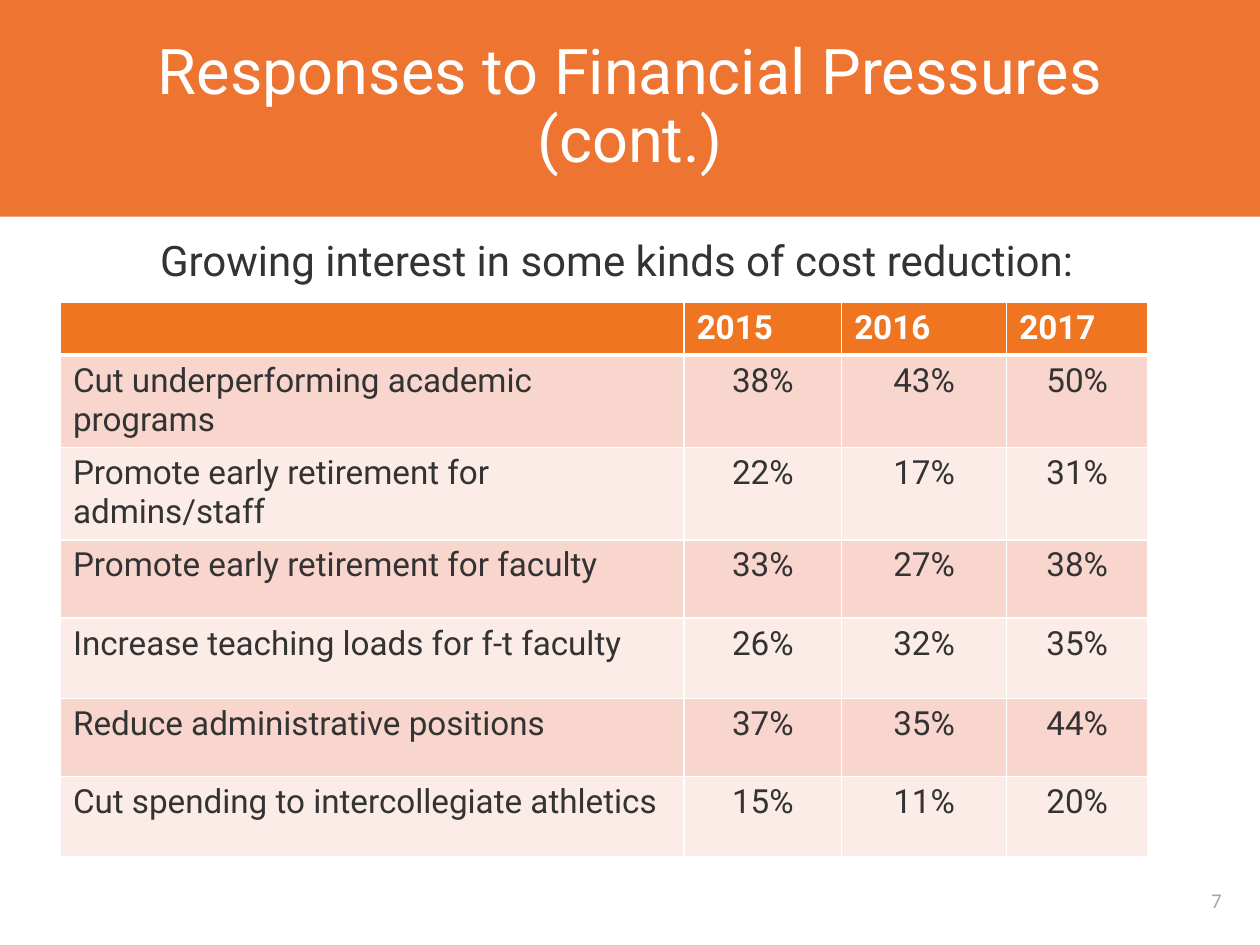
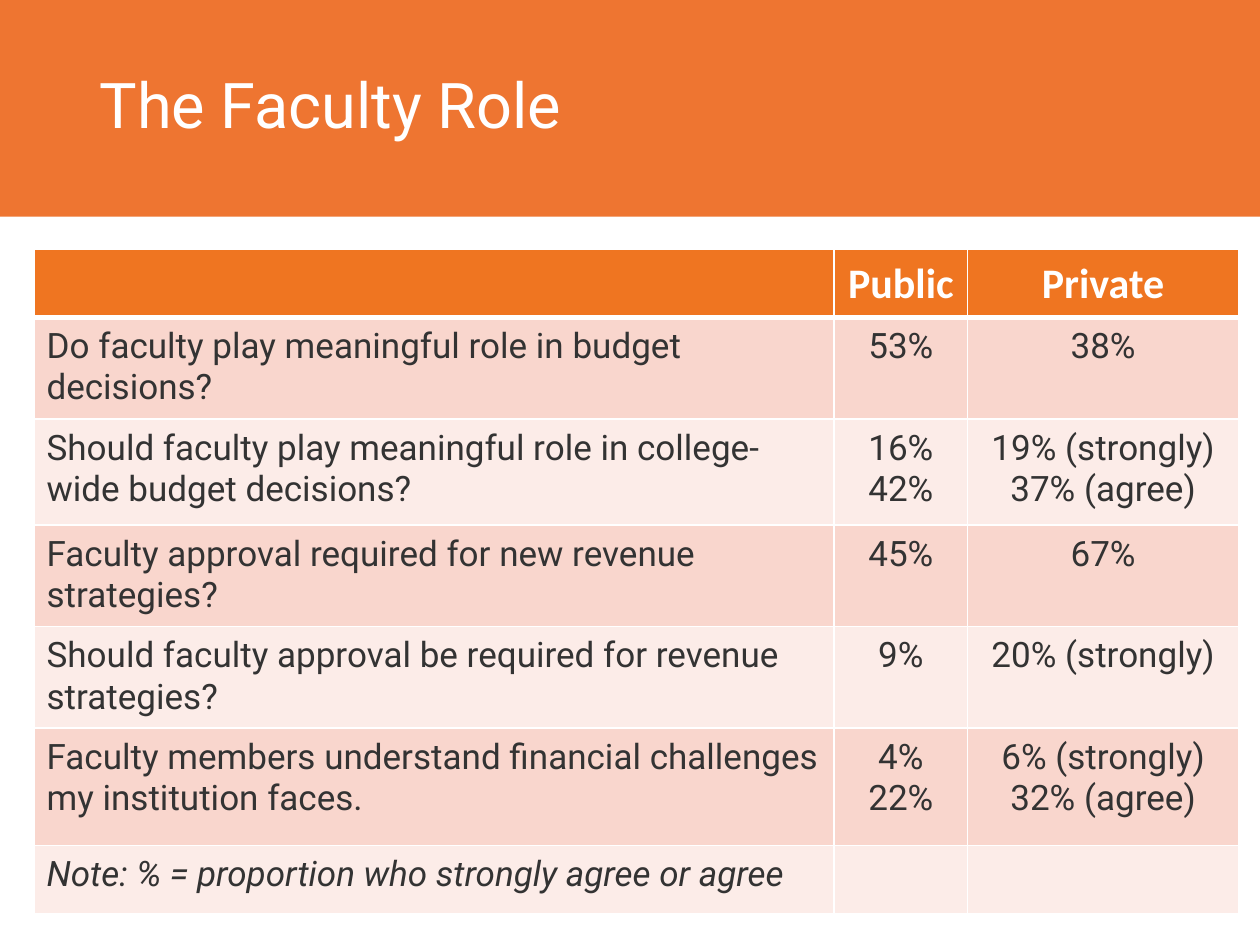
import pptx
import pptx.dml.color
import pptx.enum.shapes
import pptx.enum.text
import pptx.oxml.ns
import pptx.util
from dataclasses import dataclass
from lxml import etree
from pptx.util import Inches

ALIGN = pptx.enum.text.PP_ALIGN
ANCHOR = pptx.enum.text.MSO_ANCHOR
qn = pptx.oxml.ns.qn


@dataclass(frozen=True)
class Theme:
    band: str = "EE7531"
    header: str = "EF7521"
    stripes: tuple[str, str] = ("F9D6CD", "FCECE8")
    white: str = "FFFFFF"
    text: str = "333333"
    muted: str = "A6A6A6"
    font: str = "Roboto"
    alt_font: str = "Calibri"
    title_size: int = 36
    lead_size: int = 24
    number_size: int = 12
    rule: float = 1
    header_rule: float = 3


THEME = Theme()


@dataclass(frozen=True)
class TableSpec:
    left: float
    top: float
    cols: tuple[float, ...]
    heights: tuple[float, ...]
    rows: list[tuple[str, ...]]
    size: int
    header_size: int
    header_font: str
    header_align: ALIGN
    margin: float
    note_row: int | None = None


COST_CUTS = TableSpec(
    left=0.48, top=2.4,
    cols=(4.95, 1.25, 1.31, 1.12),
    heights=(0.39, 0.68, 0.68, 0.62, 0.64, 0.62, 0.64),
    rows=[
        ("", "2015", "2016", "2017"),
        ("Cut underperforming academic programs", "38%", "43%", "50%"),
        ("Promote early retirement for admins/staff", "22%", "17%", "31%"),
        ("Promote early retirement for faculty", "33%", "27%", "38%"),
        ("Increase teaching loads for f-t faculty", "26%", "32%", "35%"),
        ("Reduce administrative positions", "37%", "35%", "44%"),
        ("Cut spending to intercollegiate athletics", "15%", "11%", "20%"),
    ],
    size=19, header_size=19, header_font=THEME.font,
    header_align=ALIGN.LEFT, margin=0.05,
)

FACULTY_ROLE = TableSpec(
    left=0.27, top=1.98,
    cols=(6.35, 1.06, 2.15),
    heights=(0.54, 0.69, 0.84, 0.54, 0.54, 0.93, 0.54),
    rows=[
        ("", "Public", "Private"),
        ("Do faculty play meaningful role in budget decisions?", "53%", "38%"),
        ("Should faculty play meaningful role in college-wide budget decisions?",
         "16%\v42%", "19% (strongly)\v37% (agree)"),
        ("Faculty approval required for new revenue strategies?", "45%", "67%"),
        ("Should faculty approval be required for revenue strategies?",
         "9%", "20% (strongly)"),
        ("Faculty members understand financial challenges my institution faces.",
         "4%\v22%", "6% (strongly)\v32% (agree)"),
        ("Note: % = proportion who strongly agree or agree", "", ""),
    ],
    size=20, header_size=24, header_font=THEME.alt_font,
    header_align=ALIGN.CENTER, margin=0.07, note_row=6,
)


def rgb(color: str) -> pptx.dml.color.RGBColor:
    return pptx.dml.color.RGBColor.from_string(color)


def write(tf, text: str, *, size: float, color: str = THEME.text, font: str = THEME.font,
          align: ALIGN = ALIGN.LEFT, bold: bool = False, italic: bool = False,
          spacing: float | None = None) -> None:
    p = tf.paragraphs[0]
    p.text = text
    p.alignment = align
    p.space_before = pptx.util.Pt(0)
    if spacing:
        p.line_spacing = spacing
    for r in p.runs:
        r.font.size = pptx.util.Pt(size)
        r.font.name = font
        r.font.bold = bold
        r.font.italic = italic
        r.font.color.rgb = rgb(color)


def place(sp, left: float, top: float, width: float, height: float) -> None:
    sp.left, sp.top = Inches(left), Inches(top)
    sp.width, sp.height = Inches(width), Inches(height)


def add_band(slide) -> None:
    """Draw the title band behind everything else."""
    sp = slide.shapes.add_shape(pptx.enum.shapes.MSO_SHAPE.RECTANGLE,
                                Inches(-0.01), 0, Inches(10.02), Inches(1.72))
    sp.shadow.inherit = False
    sp.fill.solid()
    sp.fill.fore_color.rgb = rgb(THEME.band)
    sp.line.fill.background()
    slide.shapes._spTree.insert(2, sp._element)


def add_number(slide, number: int) -> None:
    sp = slide.shapes.add_textbox(Inches(9.31), Inches(6.95), Inches(0.69), Inches(0.39))
    tf = sp.text_frame
    tf.word_wrap = True
    tf.vertical_anchor = ANCHOR.MIDDLE
    write(tf, str(number), size=THEME.number_size, color=THEME.muted,
          font=THEME.alt_font, align=ALIGN.CENTER)


def start_slide(prs, layout: int, title: str, number: int, align: ALIGN):
    """Add a slide with its band, title and page number."""
    slide = prs.slides.add_slide(prs.slide_layouts[layout])
    add_band(slide)
    sp = slide.shapes.title
    place(sp, 0.69, 0, 8.62, 1.71)
    tf = sp.text_frame
    tf.auto_size = pptx.enum.text.MSO_AUTO_SIZE.NONE
    tf.vertical_anchor = ANCHOR.MIDDLE
    write(tf, title, size=THEME.title_size, color=THEME.white, align=align, spacing=0.9)
    add_number(slide, number)
    return slide


def set_lead(slide, text: str) -> None:
    """Put one line without a bullet in the body placeholder."""
    sp = slide.placeholders[1]
    place(sp, 1.17, 1.6, 8.67, 5.39)
    tf = sp.text_frame
    tf.auto_size = pptx.enum.text.MSO_AUTO_SIZE.NONE
    tf.margin_top = Inches(0.31)
    p_pr = tf.paragraphs[0]._p.get_or_add_pPr()
    p_pr.set("marL", "0")
    p_pr.set("indent", "0")
    etree.SubElement(p_pr, qn("a:buNone"))
    write(tf, text, size=THEME.lead_size, spacing=0.9)


def set_borders(cell, top: float, bottom: float) -> None:
    tc_pr = cell._tc.get_or_add_tcPr()
    widths = {"lnL": THEME.rule, "lnR": THEME.rule, "lnT": top, "lnB": bottom}
    for tag, width in widths.items():
        ln = etree.SubElement(tc_pr, qn(f"a:{tag}"), w=str(pptx.util.Pt(width)))
        fill = etree.SubElement(ln, qn("a:solidFill"))
        etree.SubElement(fill, qn("a:srgbClr"), val=THEME.white)


def add_striped_table(slide, spec: TableSpec) -> None:
    table = slide.shapes.add_table(
        len(spec.rows), len(spec.cols), Inches(spec.left), Inches(spec.top),
        Inches(sum(spec.cols)), Inches(sum(spec.heights))).table
    for col, width in zip(table.columns, spec.cols):
        col.width = Inches(width)
    for row, height in zip(table.rows, spec.heights):
        row.height = Inches(height)
    for i, values in enumerate(spec.rows):
        is_header = i == 0
        for j, text in enumerate(values):
            cell = table.cell(i, j)
            set_borders(cell, top=THEME.header_rule if i == 1 else THEME.rule,
                        bottom=THEME.header_rule if is_header else THEME.rule)
            cell.fill.solid()
            cell.fill.fore_color.rgb = rgb(
                THEME.header if is_header else THEME.stripes[(i - 1) % 2])
            cell.margin_top = cell.margin_bottom = Inches(spec.margin)
            if not text:
                continue
            if is_header:
                write(cell.text_frame, text, size=spec.header_size, color=THEME.white,
                      font=spec.header_font, align=spec.header_align, bold=True)
            else:
                write(cell.text_frame, text, size=spec.size,
                      align=ALIGN.CENTER if j else ALIGN.LEFT,
                      italic=i == spec.note_row)


def main() -> None:
    prs = pptx.Presentation()
    prs.slide_width, prs.slide_height = Inches(10), Inches(7.5)

    slide = start_slide(prs, 1, "Responses to Financial Pressures (cont.)", 7, ALIGN.CENTER)
    set_lead(slide, "Growing interest in some kinds of cost reduction:")
    add_striped_table(slide, COST_CUTS)

    slide = start_slide(prs, 5, "The Faculty Role", 11, ALIGN.LEFT)
    add_striped_table(slide, FACULTY_ROLE)

    prs.save("out.pptx")


if __name__ == "__main__":
    main()
